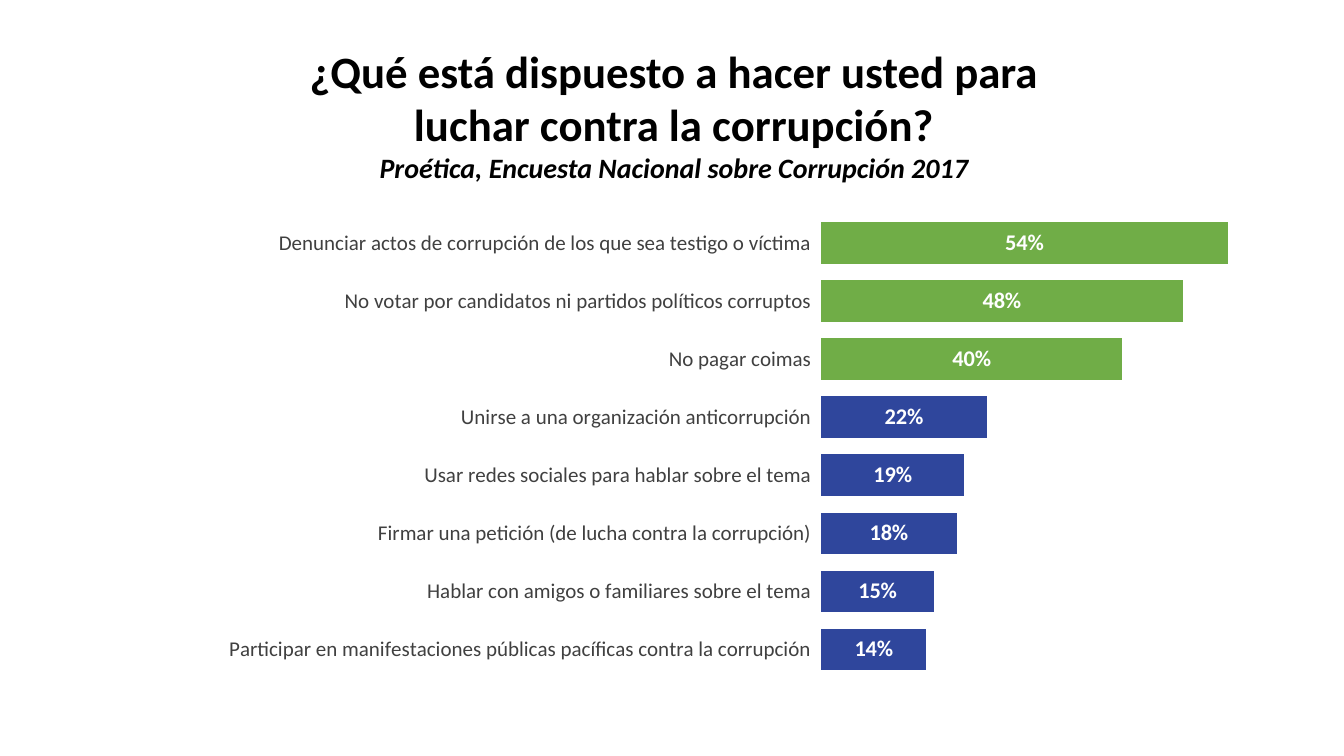
from lxml.etree import SubElement as Sub
from pptx import Presentation
from pptx.chart.data import CategoryChartData as Data
from pptx.dml.color import RGBColor
from pptx.enum.chart import XL_CHART_TYPE as Kind, XL_LABEL_POSITION as Place
from pptx.enum.chart import XL_TICK_LABEL_POSITION as Tags, XL_TICK_MARK as Tick
from pptx.enum.text import MSO_AUTO_SIZE as Fit, PP_ALIGN as Align
from pptx.oxml.ns import qn
from pptx.util import Inches, Pt

WIDE, HIGH = 13.33, 7.5
FACE = "Calibri"
GREEN, BLUE = "70AD47", "2F469C"
PERCENT = r"0\%"
ACTS = [
    ("Denunciar actos de corrupción de los que sea testigo o víctima", 54),
    ("No votar por candidatos ni partidos políticos corruptos", 48),
    ("No pagar coimas", 40),
    ("Unirse a una organización anticorrupción", 22),
    ("Usar redes sociales para hablar sobre el tema", 19),
    ("Firmar una petición (de lucha contra la corrupción)", 18),
    ("Hablar con amigos o familiares sobre el tema", 15),
    ("Participar en manifestaciones públicas pacíficas contra la corrupción", 14),
]
TOP = 3


def tint(code):
    """Turn a hex string into a colour."""
    return RGBColor.from_string(code)


def area(left, top, width, height):
    """Turn shares of the slide into lengths."""
    return (Inches(left * WIDE), Inches(top * HIGH),
            Inches(width * WIDE), Inches(height * HIGH))


def style(font, size, color="000000", bold=False, italic=False):
    """Set the look of a font."""
    font.name, font.size = FACE, Pt(size)
    font.bold, font.italic = bold, italic
    font.color.rgb = tint(color)


def write(para, text, **look):
    """Put a centred, formatted run in a paragraph."""
    para.alignment = Align.CENTER
    run = para.add_run()
    run.text = text
    style(run.font, **look)


def add_title(slide):
    """Add the question and its source."""
    box = slide.shapes.add_textbox(*area(0.2176, 0.0507, 0.5679, 0.2013))
    frame = box.text_frame
    frame.word_wrap = True
    frame.auto_size = Fit.SHAPE_TO_FIT_TEXT
    write(frame.paragraphs[0],
          "¿Qué está dispuesto a hacer usted para luchar contra la corrupción?",
          size=32, bold=True)
    write(frame.add_paragraph(),
          "Proética, Encuesta Nacional sobre Corrupción 2017",
          size=20, bold=True, italic=True)


def set_plot(chart, **shares):
    """Fix the inner plot area as shares of the chart."""
    plot = chart.element.find(".//" + qn("c:plotArea"))
    for old in plot.findall(qn("c:layout")):
        plot.remove(old)
    layout = Sub(plot, qn("c:layout"))
    plot.insert(0, layout)
    manual = Sub(layout, qn("c:manualLayout"))
    parts = {"layoutTarget": "inner", "xMode": "edge", "yMode": "edge", **shares}
    for name, value in parts.items():
        Sub(manual, qn("c:" + name)).set("val", str(value))


def set_axes(chart):
    """List the acts from the top down and hide the scale."""
    acts = chart.category_axis
    acts.reverse_order = True
    acts.major_tick_mark = acts.minor_tick_mark = Tick.NONE
    acts.tick_label_position = Tags.LOW
    acts.has_major_gridlines = False
    acts.format.line.fill.background()
    style(acts.tick_labels.font, 15, "404040")
    scale = chart.value_axis
    scale.minimum_scale, scale.maximum_scale = 0, 60
    scale.has_major_gridlines = False
    scale.tick_labels.number_format = PERCENT
    scale.tick_labels.number_format_is_linked = False
    scale.visible = False


def set_bars(plot):
    """Colour and label the bars, with the top ones in green."""
    plot.gap_width, plot.vary_by_categories = 40, False
    bars = plot.series[0]
    bars.invert_if_negative = False
    for item, color in [(bars, BLUE)] + [(bars.points[i], GREEN) for i in range(TOP)]:
        item.format.fill.solid()
        item.format.fill.fore_color.rgb = tint(color)
    tags = bars.data_labels
    tags.show_value = True
    tags.position = Place.CENTER
    tags.number_format, tags.number_format_is_linked = PERCENT, False
    style(tags.font, 16, "FFFFFF", bold=True)


def add_bars(slide):
    """Add the chart of answers."""
    data = Data(number_format=PERCENT)
    data.categories = [act for act, _ in ACTS]
    data.add_series("Series 1", [share for _, share in ACTS])
    place = area(0.0435, 0.2613, 0.9212, 0.6587)
    chart = slide.shapes.add_chart(Kind.BAR_CLUSTERED, *place, data).chart
    chart.has_legend = chart.has_title = False
    style(chart.font, 16)
    set_plot(chart, x=0.616, y=0.033, w=0.365, h=0.933)
    set_axes(chart)
    set_bars(chart.plots[0])


def main():
    """Build and save the slide."""
    deck = Presentation()
    deck.slide_width, deck.slide_height = Inches(WIDE), Inches(HIGH)
    slide = deck.slides.add_slide(deck.slide_layouts[6])
    add_bars(slide)
    add_title(slide)
    deck.save("out.pptx")


if __name__ == "__main__":
    main()
